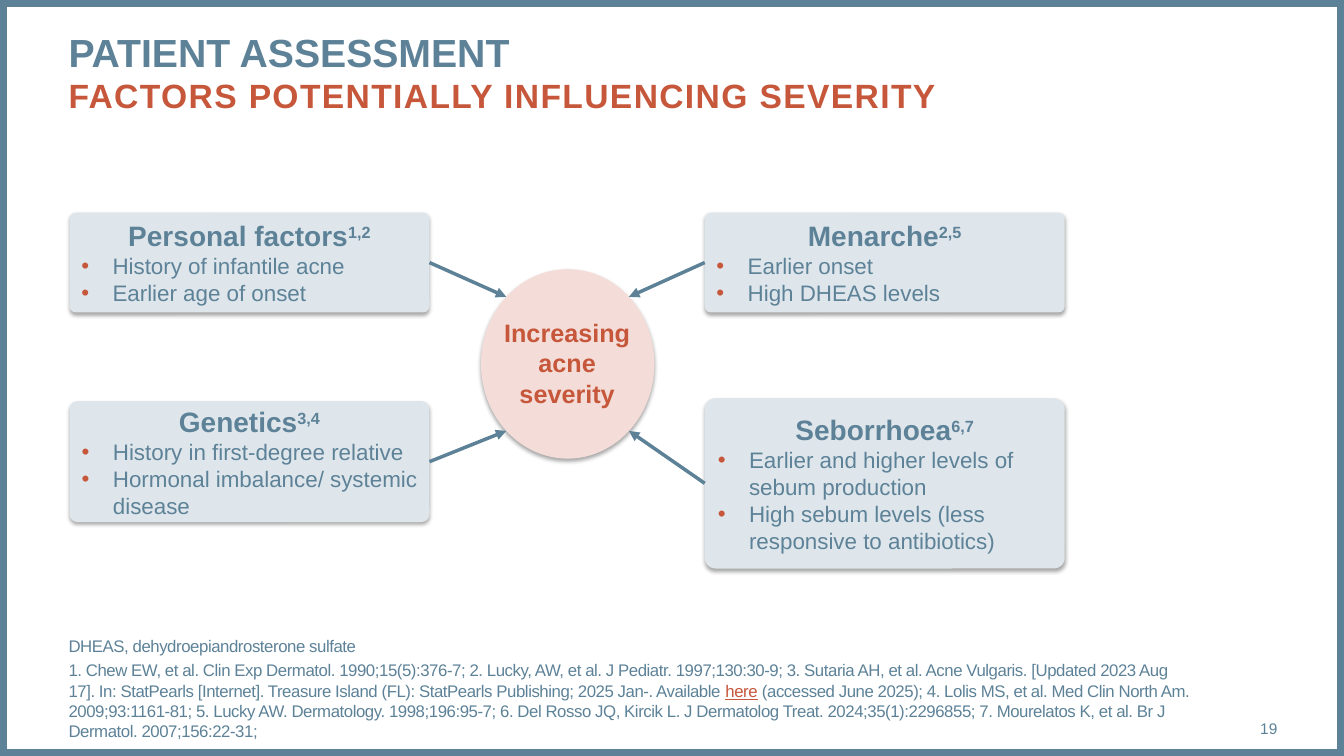
from math import cos, pi, sin

from lxml.etree import SubElement
from pptx import Presentation
from pptx.dml.color import RGBColor
from pptx.enum.shapes import MSO_CONNECTOR, MSO_SHAPE
from pptx.enum.text import MSO_ANCHOR, PP_ALIGN
from pptx.oxml.ns import qn
from pptx.util import Inches, Pt

COLOURS = {
    "slate": "5D8298",
    "rust": "C6573B",
    "pale_slate": "DEE6EB",
    "pale_rust": "F4DDD8",
    "shadow": "000000",
}
FONT = "Arial"

# Cards: left and right columns share one width
CARD_WIDTH = 3.57
LEFT, RIGHT = 0.69, 6.99
FACTORS = [
    # heading, references, left, top, height, bullets
    ("Personal factors", "1,2", LEFT, 2.11, 0.99,
     ["History of infantile acne", "Earlier age of onset"]),
    ("Menarche", "2,5", RIGHT, 2.11, 0.99,
     ["Earlier onset", "High DHEAS levels"]),
    ("Seborrhoea", "6,7", RIGHT, 3.95, 1.69,
     ["Earlier and higher levels of sebum production",
      "High sebum levels (less responsive to antibiotics)"]),
    ("Genetics", "3,4", LEFT, 3.98, 1.2,
     ["History in first-degree relative",
      "Hormonal imbalance/ systemic disease"]),
]

# Central circle
HUB_X, HUB_Y, HUB_WIDTH, HUB_HEIGHT = 5.63, 3.61, 1.72, 1.88

ABBREVIATION = "DHEAS, dehydroepiandrosterone sulfate"
CITATIONS = [
    "1. Chew EW, et al. Clin Exp Dermatol. 1990;15(5):376-7; 2. Lucky, AW, et al. "
    "J Pediatr. 1997;130:30-9; 3. Sutaria AH, et al. Acne Vulgaris. [Updated 2023 "
    "Aug 17]. In: StatPearls [Internet]. Treasure Island (FL): StatPearls "
    "Publishing; 2025 Jan-. Available ",
    "here",
    " (accessed June 2025); 4. Lolis MS, et al. Med Clin North Am. 2009;93:1161-81; "
    "5. Lucky AW. Dermatology. 1998;196:95-7; 6. Del Rosso JQ, Kircik L. "
    "J Dermatolog Treat. 2024;35(1):2296855; 7. Mourelatos K, et al. Br J Dermatol. "
    "2007;156:22-31;",
]


def rgb(name):
    return RGBColor.from_string(COLOURS[name])


def style(run, size, colour="slate", bold=False, spacing=0):
    run.font.name = FONT
    run.font.size = Pt(size)
    run.font.bold = bold
    run.font.color.rgb = rgb(colour)
    if spacing:
        run.font._element.set("spc", str(round(spacing * 100)))


def add_text(slide, left, top, width, height, anchor=MSO_ANCHOR.TOP, inset=0.0):
    frame = slide.shapes.add_textbox(
        Inches(left), Inches(top), Inches(width), Inches(height)).text_frame
    frame.word_wrap = True
    frame.vertical_anchor = anchor
    frame.margin_left = frame.margin_right = Inches(inset)
    frame.margin_top = frame.margin_bottom = Inches(inset / 2)
    return frame


def add_panel(slide, outline, fill, left, top, width, height):
    """Borderless filled shape with a soft shadow below it."""
    panel = slide.shapes.add_shape(
        outline, Inches(left), Inches(top), Inches(width), Inches(height))
    panel.fill.solid()
    panel.fill.fore_color.rgb = rgb(fill)
    panel.line.fill.background()
    panel.shadow.inherit = False
    effects = panel.element.spPr.find(qn("a:effectLst"))
    shadow = SubElement(effects, qn("a:outerShdw"), blurRad=str(Pt(3.1)),
                        dist=str(Pt(1.8)), dir="5400000", algn="t", rotWithShape="0")
    tint = SubElement(shadow, qn("a:srgbClr"), val=COLOURS["shadow"])
    SubElement(tint, qn("a:alpha"), val="35000")
    return panel


def add_bullet(paragraph):
    properties = paragraph._p.get_or_add_pPr()
    properties.set("marL", str(Inches(0.31)))
    properties.set("indent", str(Inches(-0.31)))
    colour = SubElement(properties, qn("a:buClr"))
    SubElement(colour, qn("a:srgbClr"), val=COLOURS["rust"])
    SubElement(properties, qn("a:buFont"), typeface=FONT)
    SubElement(properties, qn("a:buChar"), char="•")


def add_card(slide, heading, references, left, top, height, bullets):
    card = add_panel(slide, MSO_SHAPE.ROUNDED_RECTANGLE, "pale_slate",
                     left, top, CARD_WIDTH, height)
    card.adjustments[0] = 0.063
    frame = card.text_frame
    frame.word_wrap = True
    frame.vertical_anchor = MSO_ANCHOR.MIDDLE
    frame.text = "\n".join([heading, *bullets])
    title, *items = frame.paragraphs
    title.alignment = PP_ALIGN.CENTER
    title.add_run().text = references
    for run in title.runs:
        style(run, 20, bold=True)
    title.runs[1].font._element.set("baseline", "30000")
    for item in items:
        item.alignment = PP_ALIGN.LEFT
        add_bullet(item)
        style(item.runs[0], 16)


def add_arrow(slide, left, top, height):
    """Arrow from the inner edge of a card to the nearest diagonal of the circle."""
    card_y = top + height / 2
    card_x = left + CARD_WIDTH if left < HUB_X else left
    side = -1 if left < HUB_X else 1
    level = -1 if card_y < HUB_Y else 1
    hub_x = HUB_X + side * HUB_WIDTH / 2 * cos(pi / 4)
    hub_y = HUB_Y + level * HUB_HEIGHT / 2 * sin(pi / 4)
    arrow = slide.shapes.add_connector(
        MSO_CONNECTOR.STRAIGHT, Inches(card_x), Inches(card_y),
        Inches(hub_x), Inches(hub_y))
    arrow.line.color.rgb = rgb("slate")
    arrow.line.width = Pt(2.5)
    properties = arrow.element.spPr
    SubElement(properties.find(qn("a:ln")), qn("a:tailEnd"), type="triangle")
    SubElement(properties, qn("a:effectLst"))


def add_frame(slide, width, height):
    border = slide.shapes.add_shape(MSO_SHAPE.RECTANGLE, 0, 0, width, height)
    border.fill.background()
    border.line.color.rgb = rgb("slate")
    border.line.width = Pt(10)
    border.shadow.inherit = False


def add_title(slide):
    title = add_text(slide, 0.68, 0.28, 11.99, 0.94)
    title.text = "PATIENT ASSESSMENT\vFACTORS POTENTIALLY INFLUENCING SEVERITY"
    topic, subtopic = title.paragraphs[0].runs
    style(topic, 28, bold=True)
    style(subtopic, 24, "rust", bold=True, spacing=1)


def add_hub_label(slide):
    label = add_text(slide, 4.85, 3.1, 1.55, 1.01, inset=0.1)
    label.text = "Increasing\nacne severity"
    for line in label.paragraphs:
        line.alignment = PP_ALIGN.CENTER
        style(line.runs[0], 18, "rust", bold=True)


def add_footer(slide):
    notes = add_text(slide, 0.68, 6.95, 11.13, 0.4, MSO_ANCHOR.BOTTOM)
    notes.text = ABBREVIATION
    citations = notes.add_paragraph()
    citations.space_before = Pt(3)
    for part in CITATIONS:
        citations.add_run().text = part
    for run in (*notes.paragraphs[0].runs, *citations.runs):
        style(run, 12, spacing=-0.3)
    here = citations.runs[1]
    here.font.color.rgb = rgb("rust")
    here.font.underline = True

    number = add_text(slide, 11.81, 7.03, 0.86, 0.4, MSO_ANCHOR.MIDDLE)
    number.text = "19"
    number.paragraphs[0].alignment = PP_ALIGN.RIGHT
    style(number.paragraphs[0].runs[0], 11)


def main():
    deck = Presentation()
    deck.slide_width, deck.slide_height = Inches(13.33), Inches(7.5)
    slide = deck.slides.add_slide(deck.slide_layouts[6])

    add_frame(slide, deck.slide_width, deck.slide_height)
    add_title(slide)
    add_footer(slide)

    # Diagram: circle, cards around it, arrows pointing inwards
    add_panel(slide, MSO_SHAPE.OVAL, "pale_rust", HUB_X - HUB_WIDTH / 2,
              HUB_Y - HUB_HEIGHT / 2, HUB_WIDTH, HUB_HEIGHT)
    for factor in FACTORS:
        add_card(slide, *factor)
    for _, _, left, top, height, _ in FACTORS:
        add_arrow(slide, left, top, height)
    add_hub_label(slide)

    deck.save("out.pptx")


if __name__ == "__main__":
    main()
